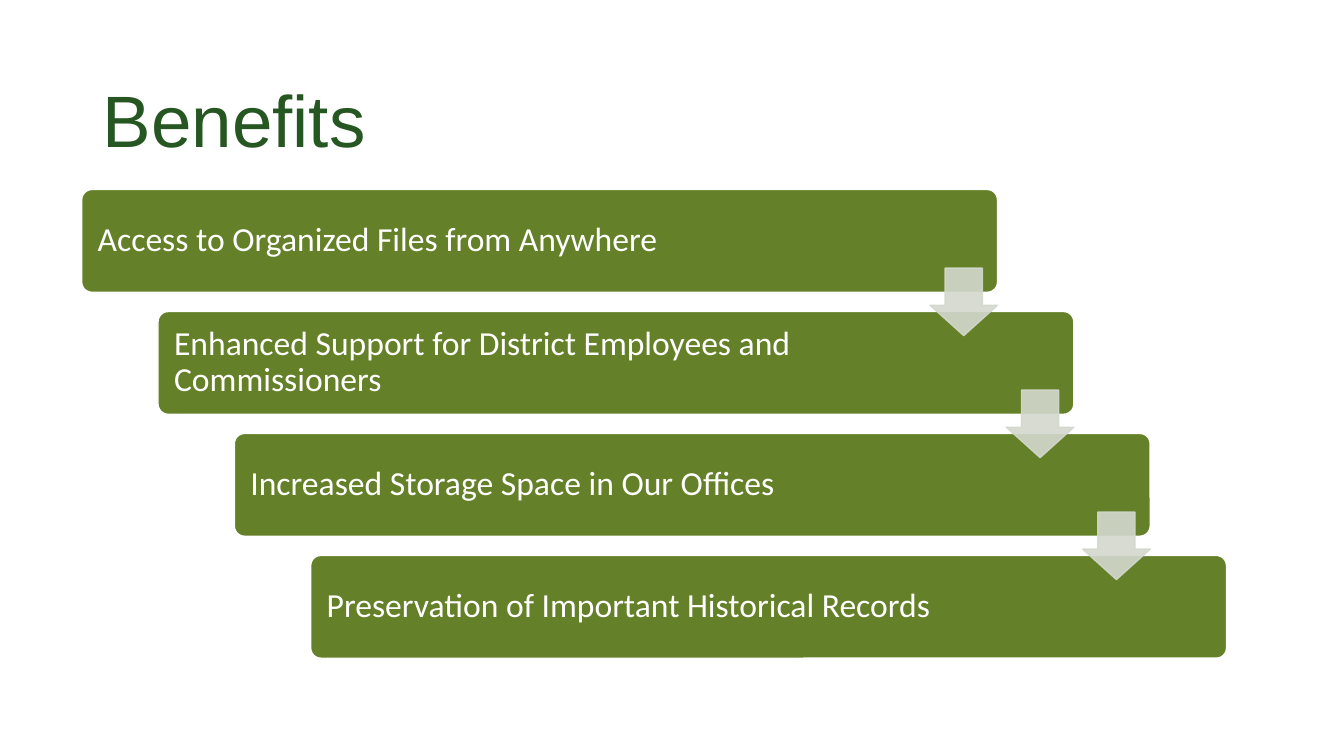
from lxml.etree import SubElement
from pptx import Presentation
from pptx.dml.color import RGBColor
from pptx.enum.shapes import MSO_SHAPE
from pptx.enum.text import MSO_ANCHOR, PP_ALIGN
from pptx.oxml.ns import qn
from pptx.util import Inches, Pt

FOREST = RGBColor(0x26, 0x56, 0x21)
OLIVE = RGBColor(0x64, 0x80, 0x28)
MIST = RGBColor(0xD3, 0xD8, 0xCD)
WHITE = RGBColor(0xFF, 0xFF, 0xFF)

# Stairs: each step moves one column right and one row down
LEFT, TOP = 0.81, 1.88
COL, ROW = 0.757, 1.21
BAR_W, BAR_H = 12 * COL, 1.02
ARROW = 0.67
ARROW_X, ARROW_Y = BAR_W - ARROW, 0.78

TITLE_FONT = {"name": "Arial", "size": Pt(52), "bold": False}
BAR_FONT = {"name": "Calibri", "size": Pt(24)}
BAR_FRAME = {
    "word_wrap": True,
    "vertical_anchor": MSO_ANCHOR.MIDDLE,
    "margin_left": Inches(0.13),
    "margin_right": Inches(1.56),
    "margin_top": Inches(0.1),
    "margin_bottom": Inches(0.1),
}
LINES = {"alignment": PP_ALIGN.LEFT, "line_spacing": 0.9}

STEPS = [
    "Access to Organized Files from Anywhere",
    "Enhanced Support for District Employees and Commissioners",
    "Increased Storage Space in Our Offices",
    "Preservation of Important Historical Records",
]


def apply(target, values):
    for name, value in values.items():
        setattr(target, name, value)


def set_text(frame, text, font, color):
    frame.text = text
    para = frame.paragraphs[0]
    apply(para, LINES)
    run_font = para.runs[0].font
    apply(run_font, font)
    run_font.color.rgb = color


def add_title(slide, text):
    title = slide.shapes.title
    apply(title, {"left": Inches(0.92), "top": Inches(0.61),
                  "width": Inches(11.5), "height": Inches(1.24)})
    title.text_frame.vertical_anchor = MSO_ANCHOR.MIDDLE
    set_text(title.text_frame, text, TITLE_FONT, FOREST)


def add_block(slide, kind, box, fill, line, adjust):
    block = slide.shapes.add_shape(kind, *map(Inches, box))
    block.shadow.inherit = False
    block.fill.solid()
    block.fill.fore_color.rgb = fill
    block.line.color.rgb = line
    block.line.width = Pt(1)
    for index, value in enumerate(adjust):
        block.adjustments[index] = value
    return block


def add_bar(slide, step, text):
    box = (LEFT + step * COL, TOP + step * ROW, BAR_W, BAR_H)
    bar = add_block(slide, MSO_SHAPE.ROUNDED_RECTANGLE, box, OLIVE, WHITE, [0.1])
    apply(bar.text_frame, BAR_FRAME)
    set_text(bar.text_frame, text, BAR_FONT, WHITE)


def add_arrow(slide, step):
    box = (LEFT + step * COL + ARROW_X, TOP + step * ROW + ARROW_Y, ARROW, ARROW)
    arrow = add_block(slide, MSO_SHAPE.DOWN_ARROW, box, MIST, MIST, [0.55, 0.45])
    for color in arrow.element.spPr.iter(qn("a:srgbClr")):
        SubElement(color, qn("a:alpha"), val="90000")


def main():
    deck = Presentation()
    deck.slide_width, deck.slide_height = Inches(13.33), Inches(7.5)
    slide = deck.slides.add_slide(deck.slide_layouts.get_by_name("Title Only"))
    add_title(slide, "Benefits")
    for step, text in enumerate(STEPS):
        add_bar(slide, step, text)
    for step in range(len(STEPS) - 1):
        add_arrow(slide, step)
    deck.save("out.pptx")


if __name__ == "__main__":
    main()
